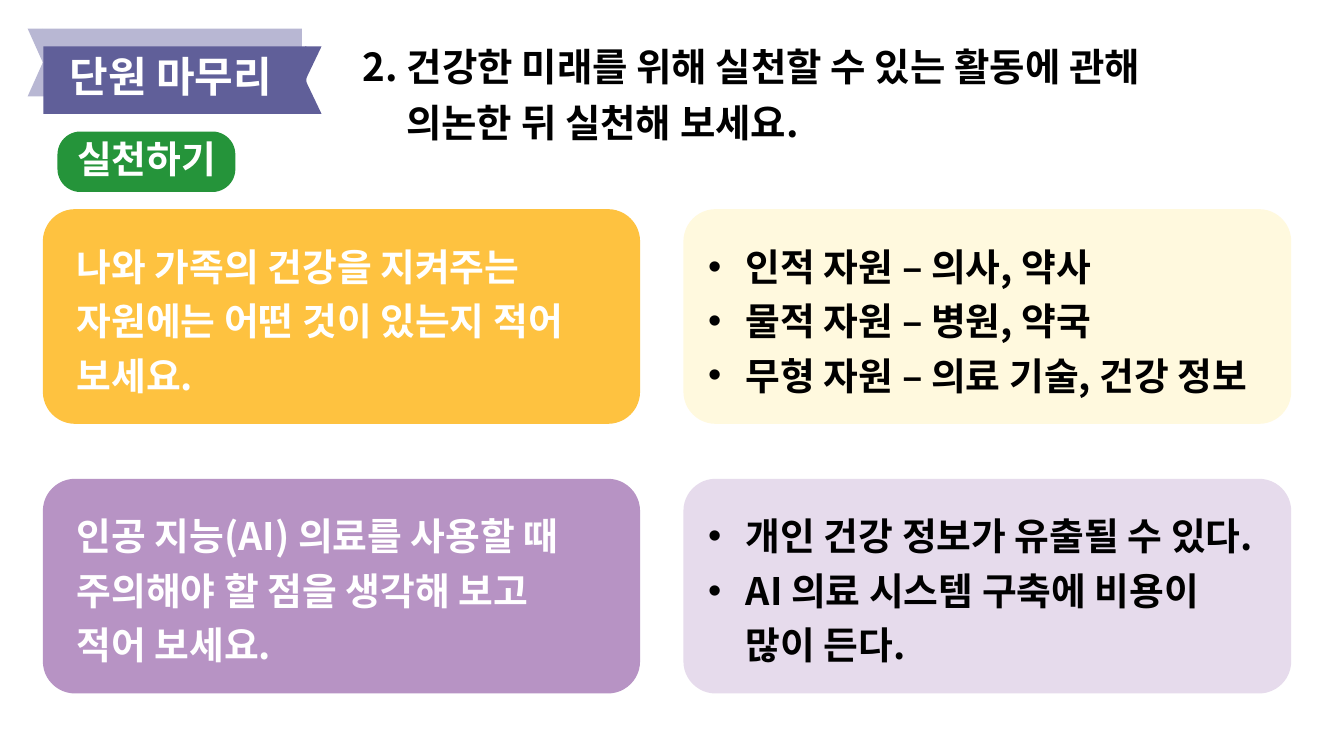
from lxml.etree import SubElement
from pptx import Presentation
from pptx.dml.color import RGBColor
from pptx.enum.shapes import MSO_SHAPE
from pptx.enum.text import MSO_ANCHOR, MSO_AUTO_SIZE, PP_ALIGN
from pptx.oxml.ns import qn
from pptx.util import Inches, Pt

COLORS = {
    "white": "FFFFFF", "black": "000000", "green": "25943A",
    "indigo": "605F99", "lavender": "B8B7D3", "amber": "FEC240",
    "cream": "FFF9DE", "purple": "B793C4", "lilac": "E6DBEC",
}
FONT = "Noto Sans CJK KR"
COLUMNS, ROWS = 160, 90
CARD_HEIGHT = 25.56


class Deck:
    def __init__(self):
        self.presentation = Presentation()
        self.presentation.slide_width = Inches(26.67)
        self.presentation.slide_height = Inches(15)
        self.slide = self.presentation.slides.add_slide(self.presentation.slide_layouts[5])

    def place(self, left, top, width, height):
        column = self.presentation.slide_width / COLUMNS
        row = self.presentation.slide_height / ROWS
        return [round(n) for n in (left * column, top * row, width * column, height * row)]

    def group(self):
        return self.slide.shapes.add_group_shape().shapes

    def shape(self, group, kind, area, color, adjust=None, rotation=0):
        shape = group.add_shape(kind, *self.place(*area))
        shape.shadow.inherit = False
        shape.fill.solid()
        shape.fill.fore_color.rgb = RGBColor.from_string(COLORS[color])
        shape.line.fill.background()
        shape.rotation = rotation
        if adjust is not None:
            shape.adjustments[0] = adjust

    def fill_text(self, frame, lines, color, size=54, spacing=1.2, align=PP_ALIGN.LEFT,
                  anchor=MSO_ANCHOR.TOP, wrap=True, bullets=False, indents=()):
        frame.word_wrap = wrap
        frame.auto_size = MSO_AUTO_SIZE.SHAPE_TO_FIT_TEXT
        frame.vertical_anchor = anchor
        for i, line in enumerate(lines):
            paragraph = frame.paragraphs[0] if i == 0 else frame.add_paragraph()
            paragraph.text = line
            paragraph.alignment = align
            paragraph.line_spacing = spacing
            properties = paragraph._p.get_or_add_pPr()
            if bullets:
                properties.set("marL", str(Inches(0.75)))
                properties.set("indent", str(Inches(-0.75)))
                SubElement(properties, qn("a:buFont"), typeface="Arial")
                SubElement(properties, qn("a:buChar"), char="•")
            elif indents:
                properties.set("marL", str(Inches(indents[i])))
            font = paragraph.font
            font.size, font.bold, font.name = Pt(size), True, FONT
            font.color.rgb = RGBColor.from_string(COLORS[color])
            SubElement(properties.find(qn("a:defRPr")), qn("a:ea"), typeface=FONT)

    def text(self, group, area, lines, color, **style):
        frame = group.add_textbox(*self.place(*area)).text_frame
        self.fill_text(frame, lines, color, **style)
        return frame

    def title(self, area, lines, color, **style):
        title = self.slide.shapes.title
        title.left, title.top, title.width, title.height = self.place(*area)
        self.fill_text(title.text_frame, lines, color, **style)

    def badge(self, label):
        group = self.group()
        self.shape(group, MSO_SHAPE.ROUNDED_RECTANGLE, (6.84, 15.66, 21.18, 7.2), "green", 0.38)
        frame = self.text(group, (8.58, 16.44, 17.76, 5.58), [label], "white", spacing=0.9,
                          align=PP_ALIGN.CENTER, anchor=MSO_ANCHOR.MIDDLE, wrap=False)
        frame.margin_left = frame.margin_right = Inches(0.06)
        frame.margin_top = frame.margin_bottom = Inches(0.06)

    def ribbon(self, label):
        group = self.group()
        for band, tail, top, color, band_turn, tail_turn in (
            ((5.1, 30.84), (3.3, 3.6), 3.42, "lavender", 180, 0),
            ((5.16, 31.32), (34.44, 3.84), 5.52, "indigo", 0, 180),
        ):
            self.shape(group, MSO_SHAPE.PENTAGON, (band[0], top, band[1], 8.04), color, 0, band_turn)
            self.shape(group, MSO_SHAPE.CHEVRON, (tail[0], top, tail[1], 8.04), color, 0.5, tail_turn)
        self.text(group, (7.68, 6.42, 26.46, 6.06), [label], "white", size=60, spacing=0.9)

    def card(self, left, top, width, fill, inset, text_width, lines, color, bullets=False):
        group = self.group()
        self.shape(group, MSO_SHAPE.ROUNDED_RECTANGLE, (left, top, width, CARD_HEIGHT), fill, 0.15)
        self.text(group, (left + inset, top + 2.7, text_width, 20.22), lines, color, bullets=bullets)


def main():
    deck = Deck()
    deck.title((42.6, 3.78, 102.84, 13.38),
               ["2. 건강한 미래를 위해 실천할 수 있는 활동에 관해", "의논한 뒤 실천해 보세요."],
               "black", size=55, indents=(0, 0.86))
    deck.badge("실천하기")
    deck.ribbon("단원 마무리")

    activities = [
        ("나와 가족의 건강을 지켜주는 자원에는 어떤 것이 있는지 적어 보세요.", "amber",
         ["인적 자원 – 의사, 약사", "물적 자원 – 병원, 약국", "무형 자원 – 의료 기술, 건강 정보"], "cream"),
        ("인공 지능(AI) 의료를 사용할 때 주의해야 할 점을 생각해 보고 적어 보세요.", "purple",
         ["개인 건강 정보가 유출될 수 있다.", "AI 의료 시스템 구축에 비용이 많이 든다."], "lilac"),
    ]
    for i, (question, question_fill, answers, answer_fill) in enumerate(activities):
        top = 24.9 + i * 32.1
        deck.card(5.1, top, 71.1, question_fill, 3.42, 63.36, [question], "white")
        deck.card(81.36, top, 72.36, answer_fill, 2.34, 68.94, answers, "black", bullets=True)

    deck.presentation.save("out.pptx")


if __name__ == "__main__":
    main()
